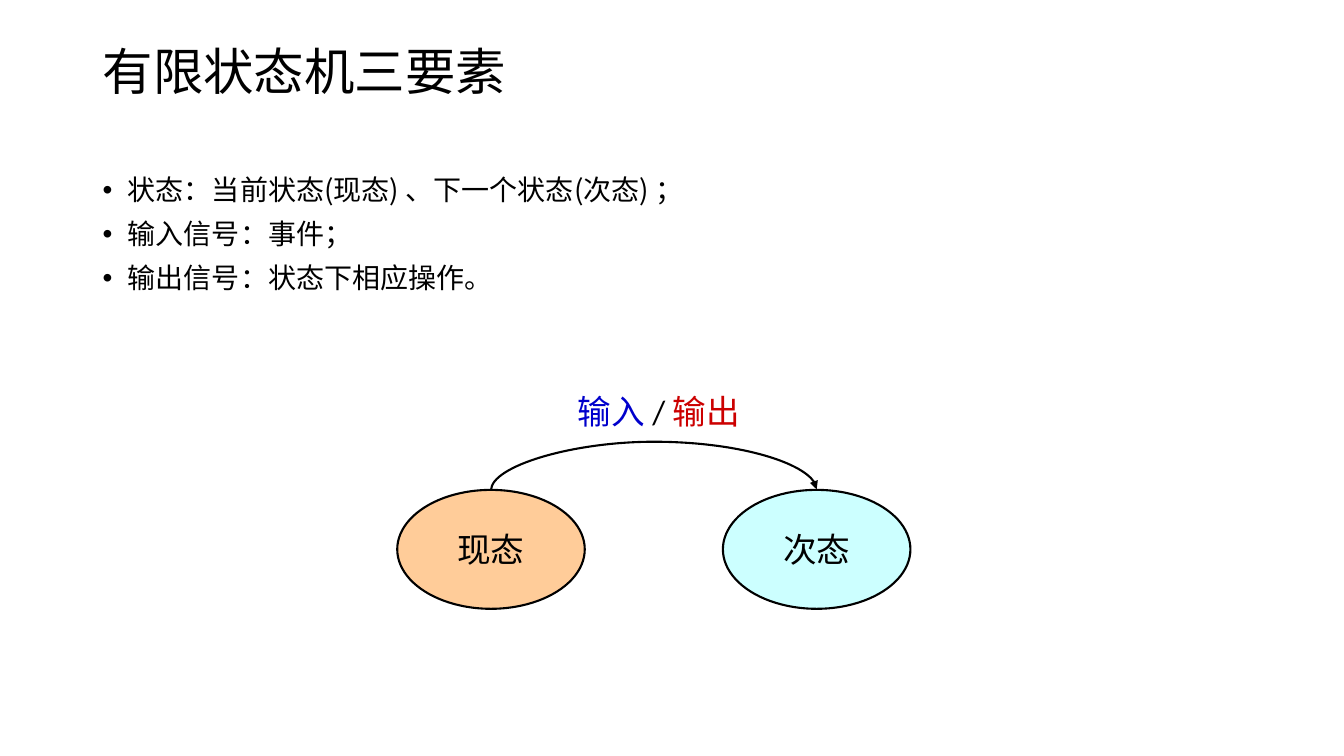
from dataclasses import dataclass

from lxml import etree
from pptx import Presentation
from pptx.dml.color import RGBColor
from pptx.enum.shapes import MSO_CONNECTOR, MSO_SHAPE
from pptx.enum.text import MSO_ANCHOR, PP_ALIGN
from pptx.oxml.ns import qn
from pptx.util import Inches, Pt

CURVE = MSO_CONNECTOR.CURVE
OVAL = MSO_SHAPE.OVAL
MIDDLE, TOP = MSO_ANCHOR.MIDDLE, MSO_ANCHOR.TOP
CENTER, LEFT = PP_ALIGN.CENTER, PP_ALIGN.LEFT


@dataclass(frozen=True)
class Theme:
    """Colours, fonts and sizes of the slide."""

    ink: str = "000000"
    current: str = "FFCC99"
    following: str = "CCFFFF"
    input: str = "0000CC"
    output: str = "CC0000"
    heading_font: str = "Noto Sans CJK SC"
    diagram_font: str = "Calibri"
    title: int = 36
    body: int = 20
    diagram: int = 24
    stroke: float = 1.5


class StateSlide:
    """Draws the elements of a state machine slide."""

    def __init__(self, slide, theme):
        self.shapes = slide.shapes
        self.theme = theme

    def apply(self, target, values):
        """Set each attribute named in values."""
        for name, value in values.items():
            setattr(target, name, value)

    def add_runs(self, paragraph, pieces, font, size):
        """Add coloured runs to a paragraph."""
        for words, color in pieces:
            run = paragraph.add_run()
            run.text = words
            self.apply(run.font, {"name": font, "size": Pt(size)})
            run.font.color.rgb = RGBColor.from_string(color)
            east_asian = etree.SubElement(run._r.get_or_add_rPr(), qn("a:ea"))
            east_asian.set("typeface", self.theme.heading_font)

    def indent(self, paragraph, margin, first, bullet=None):
        """Set a hanging indent and an optional bullet."""
        properties = paragraph._p.get_or_add_pPr()
        properties.set("marL", str(Inches(margin)))
        properties.set("indent", str(Inches(first)))
        if bullet:
            font = etree.SubElement(properties, qn("a:buFont"))
            font.set("typeface", "Arial")
            etree.SubElement(properties, qn("a:buChar")).set("char", bullet)

    def text_box(self, box, anchor=TOP):
        """Add a wrapping text box and return its frame."""
        frame = self.shapes.add_textbox(*map(Inches, box)).text_frame
        self.apply(frame, {"word_wrap": True, "vertical_anchor": anchor})
        return frame

    def title(self, box, words):
        """Add the slide title."""
        heading = self.text_box(box, MIDDLE).paragraphs[0]
        heading.line_spacing = 1.1
        self.add_runs(heading, [(words, self.theme.ink)], self.theme.heading_font, self.theme.title)

    def bullets(self, box, items):
        """Add a bulleted list."""
        frame = self.text_box(box)
        for index, item in enumerate(items):
            entry = frame.add_paragraph() if index else frame.paragraphs[0]
            self.indent(entry, 0.25, -0.25, "•")
            self.apply(entry, {"alignment": LEFT, "line_spacing": 0.9,
                               "space_before": Pt(10 if index else 0)})
            self.add_runs(entry, [(item, self.theme.ink)], self.theme.heading_font, self.theme.body)

    def stroke(self, line):
        """Give a line the common colour and width."""
        line.color.rgb = RGBColor.from_string(self.theme.ink)
        line.width = Pt(self.theme.stroke)

    def state(self, box, words, fill):
        """Add a state as a labelled ellipse."""
        ellipse = self.shapes.add_shape(OVAL, *map(Inches, box))
        ellipse.shadow.inherit = False
        ellipse.fill.solid()
        ellipse.fill.fore_color.rgb = RGBColor.from_string(fill)
        self.stroke(ellipse.line)
        frame = ellipse.text_frame
        self.apply(frame, {"word_wrap": False, "vertical_anchor": MIDDLE})
        frame.paragraphs[0].alignment = CENTER
        self.add_runs(frame.paragraphs[0], [(words, self.theme.ink)],
                      self.theme.diagram_font, self.theme.diagram)
        return ellipse

    def transition(self, source, target, rise):
        """Arch an arrow from the top of one state to the top of another."""
        arrow = self.shapes.add_connector(CURVE, 0, 0, 0, 0)
        arrow.begin_connect(source, 0)
        arrow.end_connect(target, 0)
        span, depth = target.left - source.left, Inches(0.01)
        middle = source.left + (source.width + span) // 2
        self.apply(arrow, {"left": middle - depth // 2, "top": source.top - span // 2,
                           "width": depth, "height": span})
        properties = arrow._element.spPr
        for name, value in {"rot": "5400000", "flipH": "1", "flipV": "1"}.items():
            properties.find(qn("a:xfrm")).set(name, value)
        geometry = properties.find(qn("a:prstGeom"))
        guides = geometry.find(qn("a:avLst"))
        if guides is None:
            guides = etree.SubElement(geometry, qn("a:avLst"))
        guide = etree.SubElement(guides, qn("a:gd"))
        guide.set("name", "adj1")
        guide.set("fmla", f"val {round(100000 * Inches(rise) / depth)}")
        self.stroke(arrow.line)
        etree.SubElement(properties.find(qn("a:ln")), qn("a:tailEnd")).set("type", "triangle")
        etree.SubElement(properties, qn("a:effectLst"))

    def label(self, box, pieces):
        """Add a centred label with coloured parts."""
        caption = self.text_box(box).paragraphs[0]
        self.indent(caption, 0.4, -0.31)
        caption.alignment = CENTER
        self.add_runs(caption, pieces, self.theme.diagram_font, self.theme.diagram)


def main():
    """Build and save the slide."""
    deck = Presentation()
    deck.slide_width, deck.slide_height = Inches(13.33), Inches(7.5)
    theme = Theme()
    page = StateSlide(deck.slides.add_slide(deck.slide_layouts[6]), theme)
    page.title((0.92, 0.26, 11.5, 0.81), "有限状态机三要素")
    page.bullets((0.92, 1.7, 11.5, 1.5), [
        "状态：当前状态(现态) 、下一个状态(次态) ；",
        "输入信号：事件；",
        "输出信号：状态下相应操作。",
    ])
    current, following = [
        page.state((3.94 + 3.23 * index, 4.86, 1.86, 1.18), words, fill)
        for index, (words, fill) in enumerate([("现态", theme.current), ("次态", theme.following)])
    ]
    page.transition(current, following, 0.49)
    page.label((5.18, 3.83, 2.62, 0.52), [
        ("输入 ", theme.input), ("/ ", theme.ink), ("输出", theme.output),
    ])
    deck.save("out.pptx")


if __name__ == "__main__":
    main()
